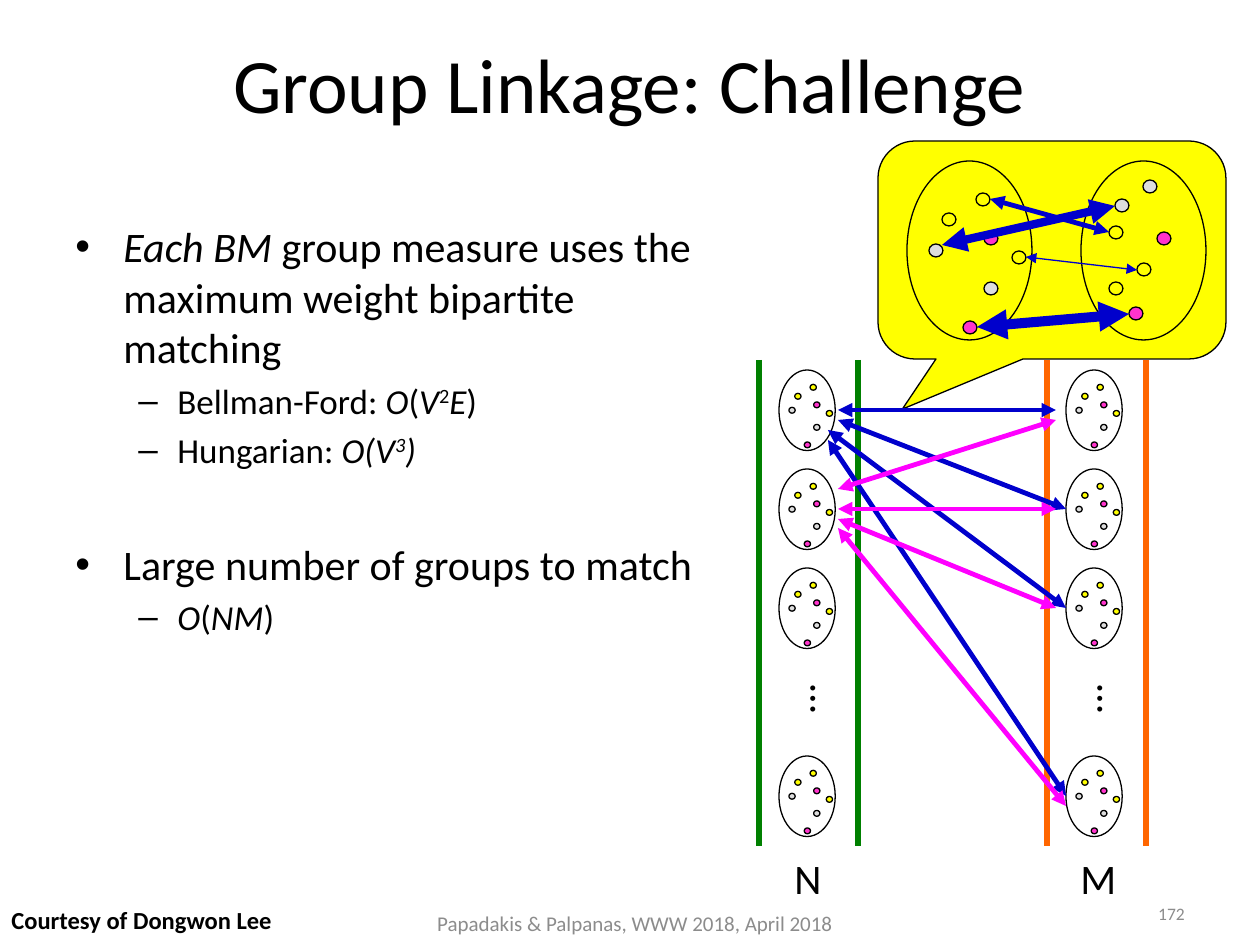
from lxml.etree import SubElement
from pptx import Presentation
from pptx.dml.color import RGBColor
from pptx.enum.shapes import MSO_CONNECTOR, MSO_SHAPE
from pptx.enum.text import MSO_ANCHOR, PP_ALIGN
from pptx.oxml.ns import qn
from pptx.util import Emu, Pt

FONT = "Calibri"
COLORS = {
    "black": "000000", "grey": "8C8C8C", "yellow": "FFFF00", "silver": "DDDDDD",
    "pink": "FF33CC", "blue": "0000CC", "magenta": "FF00FF",
    "green": "008000", "orange": "FF6600",
}
GROUP_SIZE = (125, 179)
DOT_SIZE = (14, 13)
LEFT_DOTS = [
    (35, 52, "yellow"), (69, 32, "yellow"), (22, 83, "silver"), (105, 90, "yellow"),
    (77, 71, "pink"), (56, 160, "pink"), (77, 121, "silver"),
]
RIGHT_DOTS = [
    (28, 65, "yellow"), (28, 121, "yellow"), (34, 38, "silver"), (56, 102, "yellow"),
    (76, 71, "pink"), (48, 146, "pink"), (62, 19, "silver"),
]
MATCHES = [
    ((990, 199), (1109, 232), 2.75), ((1026, 257), (1137, 270), 0.75),
    ((977, 327), (1129, 314), 5.75), ((942, 245), (1115, 206), 4.75),
]
COLUMNS = [("N", 779, 759, 782, 55, "green"), ("M", 1066, 1047, 1068, 60, "orange")]
GROUP_TOPS = [370, 469, 568, 756]
PAIRS = [
    ((838, 410), (1056, 410), "blue"), ((838, 420), (1066, 509), "blue"),
    ((828, 430), (1066, 608), "blue"), ((828, 440), (1066, 796), "blue"),
    ((838, 509), (1056, 509), "magenta"), ((838, 519), (1056, 608), "magenta"),
    ((838, 528), (1066, 806), "magenta"), ((838, 489), (1056, 420), "magenta"),
]
BULLETS = [
    (0, 0, [("Each BM", "i"), (" group measure uses the maximum weight bipartite matching", "")]),
    (1, 4, [("Bellman-Ford: ", ""), ("O", "i"), ("(", ""), ("V", "i"), ("2", "^"),
            ("E", "i"), (")", "")]),
    (1, 4, [("Hungarian: ", ""), ("O(V", "i"), ("3", "i^"), (")", "i")]),
    (0, 39, [("Large number of groups to match", "")]),
    (1, 4, [("O", "i"), ("(", ""), ("NM", "i"), (")", "")]),
]
LEVELS = [("•", 48, -48, 24), ("–", 102, -39, 20)]


def px(length):
    """Turn pixels at 126 to the inch into EMU."""
    return Emu(round(length * 914400 / 126))


def color(name):
    """Look up a named colour."""
    return RGBColor.from_string(COLORS[name])


def style_font(font, size, name="black", bold=False, italic=False):
    """Set typeface, size, colour and weight."""
    font.name, font.size, font.bold, font.italic = FONT, Pt(size), bold, italic
    font.color.rgb = color(name)


def add_shape(shapes, kind, left, top, width, height, fill=None):
    """Add a thinly outlined preset shape."""
    shape = shapes.add_shape(kind, px(left), px(top), px(width), px(height))
    shape.shadow.inherit = False
    if fill:
        shape.fill.solid()
        shape.fill.fore_color.rgb = color(fill)
    else:
        shape.fill.background()
    shape.line.color.rgb = color("black")
    shape.line.width = Pt(0.75)
    return shape


def add_line(shapes, start, end, name, width, arrows=False):
    """Add a straight line, with arrowheads at both ends if asked."""
    line = shapes.add_connector(MSO_CONNECTOR.STRAIGHT, *map(px, start + end))
    line.line.color.rgb = color(name)
    line.line.width = Pt(width)
    properties = line._element.spPr
    if arrows:
        for tag in ("a:headEnd", "a:tailEnd"):
            SubElement(properties.find(qn("a:ln")), qn(tag), type="triangle")
    SubElement(properties, qn("a:effectLst"))


def add_group(shapes, left, top, dots, scale=1):
    """Add an ellipse holding coloured dots."""
    width, height = (side * scale for side in GROUP_SIZE)
    add_shape(shapes, MSO_SHAPE.OVAL, left, top, width, height)
    dot_width, dot_height = (side * scale for side in DOT_SIZE)
    for x, y, fill in dots:
        add_shape(shapes, MSO_SHAPE.OVAL, left + x * scale, top + y * scale,
                  dot_width, dot_height, fill)


def add_label(page, text, left, top, width, height, size=24, name="black", bold=False,
              align=PP_ALIGN.LEFT, anchor=MSO_ANCHOR.TOP, wrap=False):
    """Add a text box with one formatted paragraph."""
    box = page.shapes.add_textbox(px(left), px(top), px(width), px(height))
    frame = box.text_frame
    frame.text = text
    frame.word_wrap = wrap
    frame.vertical_anchor = anchor
    para = frame.paragraphs[0]
    para.alignment = align
    style_font(para.runs[0].font, size, name, bold)
    return frame


def add_title(page, text):
    """Place and format the title placeholder."""
    title = page.shapes.title
    title.left, title.top, title.width, title.height = map(px, (0, 4, 1260, 157))
    title.text_frame.text = text
    title.text_frame.vertical_anchor = MSO_ANCHOR.MIDDLE
    para = title.text_frame.paragraphs[0]
    para.alignment = PP_ALIGN.CENTER
    style_font(para.runs[0].font, 44)


def add_bullets(page):
    """Add the two-level bullet list."""
    box = page.shapes.add_textbox(px(63), px(155), px(646), px(704))
    frame = box.text_frame
    frame.word_wrap = True
    frame.margin_top = px(66)
    for index, (level, before, spans) in enumerate(BULLETS):
        para = frame.add_paragraph() if index else frame.paragraphs[0]
        bullet, margin, indent, size = LEVELS[level]
        para.level = level
        para.space_before = Pt(before)
        properties = para._p.get_or_add_pPr()
        properties.set("marL", str(px(margin)))
        properties.set("indent", str(px(indent)))
        SubElement(properties, qn("a:buFont"), typeface="Arial")
        SubElement(properties, qn("a:buChar"), char=bullet)
        for text, marks in spans:
            span = para.add_run()
            span.text = text
            style_font(span.font, size, italic="i" in marks)
            if "^" in marks:
                span._r.get_or_add_rPr().set("baseline", "30000")


def add_callout(page):
    """Add the callout with one matched pair of groups."""
    shapes = page.shapes.add_group_shape().shapes
    callout = add_shape(shapes, MSO_SHAPE.ROUNDED_RECTANGULAR_CALLOUT,
                        878, 141, 348, 218, "yellow")
    for index, value in enumerate((-0.43, 0.73, 0.17)):
        callout.adjustments[index] = value
    add_group(shapes, 907, 161, LEFT_DOTS)
    add_group(shapes, 1081, 161, RIGHT_DOTS)
    for start, end, width in MATCHES:
        add_line(shapes, start, end, "blue", width, arrows=True)


def add_column(page, text, left, rail, label_left, label_width, name):
    """Add a railed column of groups with its label."""
    for x in (rail, rail + 99):
        add_line(page.shapes, (x, 360), (x, 846), name, 3.75)
    for top in GROUP_TOPS:
        add_group(page.shapes.add_group_shape().shapes, left, top, LEFT_DOTS, 0.45)
    dots = add_label(page, "…", left + 4, 672, 76, 54)
    dots._txBody.bodyPr.set("vert", "eaVert")
    add_label(page, text, label_left, 846, label_width, 63)


def add_footers(page):
    """Add the credit, the footer and the page number."""
    number = add_label(page, "172", 903, 876, 294, 50, 10, "grey",
                       align=PP_ALIGN.RIGHT, wrap=True)
    number.margin_top = px(27)
    add_label(page, "Papadakis & Palpanas, WWW 2018, April 2018", 412, 898, 446, 50, 12,
              "grey", align=PP_ALIGN.CENTER, anchor=MSO_ANCHOR.MIDDLE, wrap=True)
    add_label(page, "Courtesy of Dongwon Lee", -1, 895, 381, 50, 14,
              bold=True, anchor=MSO_ANCHOR.MIDDLE, wrap=True)


def main():
    """Build the slide and save the deck."""
    deck = Presentation()
    deck.slide_width, deck.slide_height = px(1260), px(945)
    page = deck.slides.add_slide(deck.slide_layouts[5])
    add_title(page, "Group Linkage: Challenge")
    add_bullets(page)
    add_callout(page)
    for column in COLUMNS:
        add_column(page, *column)
    for start, end, name in PAIRS:
        add_line(page.shapes, start, end, name, 2.75, arrows=True)
    add_footers(page)
    deck.save("out.pptx")


if __name__ == "__main__":
    main()
